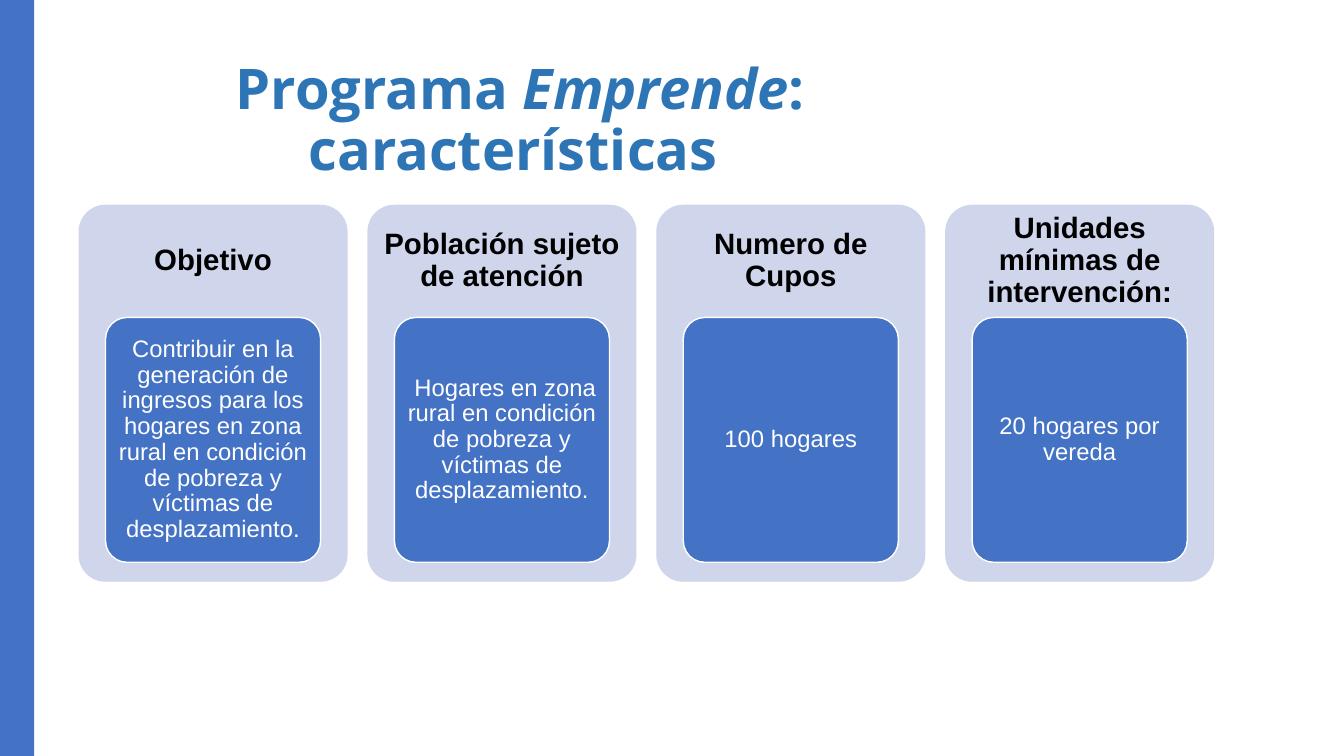
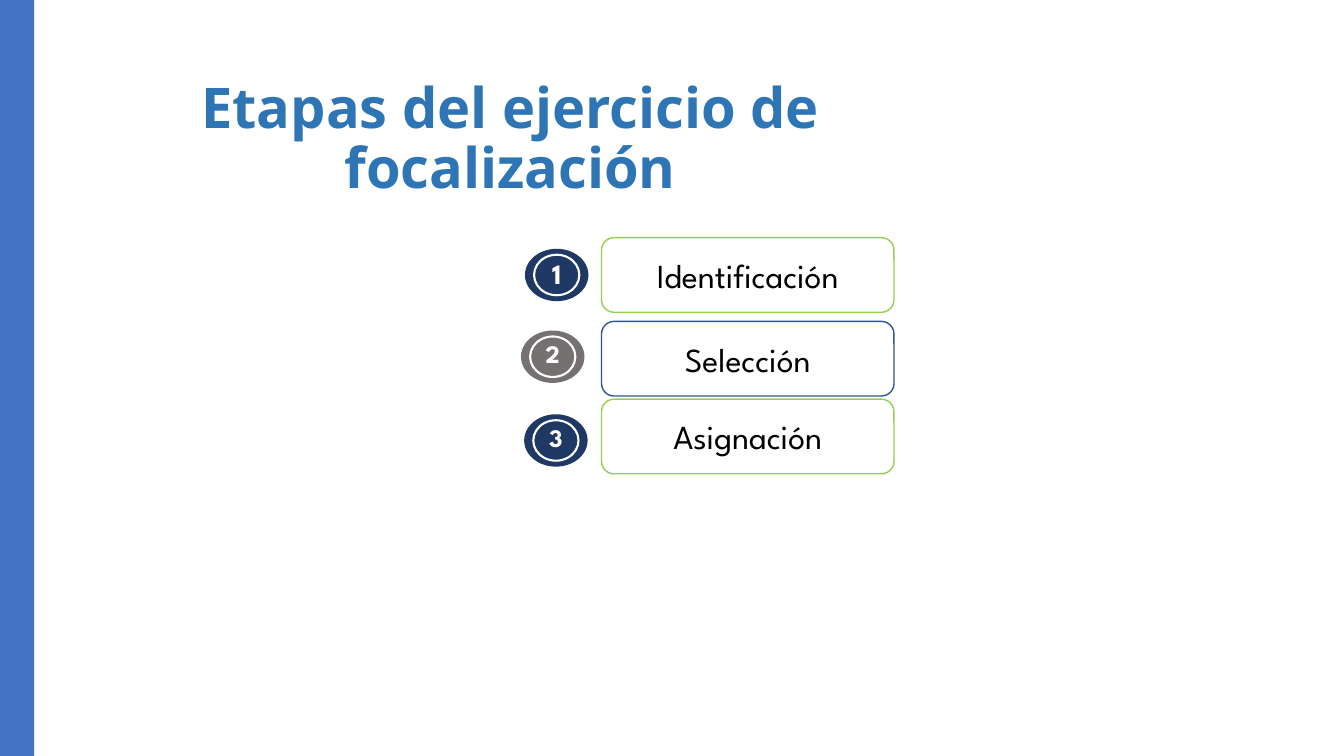
"""Build two slides on the Emprende programme: its features and its targeting stages."""
from pptx import Presentation
from pptx.dml.color import RGBColor
from pptx.enum.shapes import MSO_SHAPE
from pptx.enum.text import MSO_ANCHOR, MSO_AUTO_SIZE, PP_ALIGN
from pptx.util import Cm, Pt

RECTANGLE, ROUNDED, OVAL = MSO_SHAPE.RECTANGLE, MSO_SHAPE.ROUNDED_RECTANGLE, MSO_SHAPE.OVAL
TOP, MIDDLE = MSO_ANCHOR.TOP, MSO_ANCHOR.MIDDLE
CENTER, NO_AUTOFIT = PP_ALIGN.CENTER, MSO_AUTO_SIZE.NONE

COLORS = {
    "blue": "4472C4", "title": "2E75B6", "card": "CFD5EA", "navy": "203864",
    "gray": "767171", "green": "92D050", "outline": "2F5597",
    "white": "FFFFFF", "black": "000000",
}
TITLE_FONT, CARD_FONT, STAGE_FONT = "Open Sans", "Arial", "League Spartan"
SLIDE_WIDTH, SLIDE_HEIGHT, BAND_WIDTH = 33.87, 19.05, 0.86
TITLE_ONLY = 5

FEATURES_TITLE = [("Programa ", False), ("Emprende", True), (": características ", False)]
FEATURES = [
    ("Objetivo", "Contribuir en la generación de ingresos para los hogares en zona rural "
                 "en condición de pobreza y víctimas de desplazamiento."),
    ("Población sujeto de atención", " Hogares en zona rural en condición de pobreza "
                                     "y víctimas de desplazamiento."),
    ("Numero de Cupos", "100 hogares"),
    ("Unidades mínimas de intervención:", "20 hogares por vereda"),
]
CARD_LEFT, CARD_TOP, CARD_PITCH = 1.98, 5.16, 7.28
CARD_WIDTH, CARD_HEIGHT, HEADER_HEIGHT = 6.78, 9.5, 2.84
PANEL_WIDTH, PANEL_HEIGHT = 5.42, 6.17

STAGES_TITLE = [("Etapas del ejercicio de focalización", False)]
STAGES = [
    {"label": "Identificación", "top": 5.99, "line": "green",
     "badge": (13.23, 6.27), "fill": "navy", "size": 20},
    {"label": "Selección", "top": 8.1, "line": "outline",
     "badge": (13.13, 8.33), "fill": "gray", "size": 18},
    {"label": "Asignación", "top": 10.06, "line": "green",
     "badge": (13.21, 10.44), "fill": "navy", "size": 18},
]
STAGE_LEFT, STAGE_WIDTH, STAGE_HEIGHT = 15.16, 7.37, 1.88
BADGE_WIDTH, BADGE_HEIGHT, RING_WIDTH, RING_HEIGHT = 1.6, 1.32, 1.14, 1.02
NUMBER_WIDTH, NUMBER_HEIGHT = 1.85, 1.83


def color(name):
    return RGBColor.from_string(COLORS[name])


def add_box(shapes, kind, box, fill=None, line=None, line_width=1.0, corner=None):
    shape = shapes.add_shape(kind, *map(Cm, box))
    shape.shadow.inherit = False
    if fill:
        shape.fill.solid()
        shape.fill.fore_color.rgb = color(fill)
    else:
        shape.fill.background()
    if line:
        shape.line.color.rgb = color(line)
        shape.line.width = Pt(line_width)
    else:
        shape.line.fill.background()
    if corner is not None:
        shape.adjustments[0] = corner
    return shape


def write_text(shape, runs, font_name, size, text_color, bold=False,
               anchor=MIDDLE, spacing=1.0, margins=(0.25, 0.13)):
    frame = shape.text_frame
    frame.word_wrap = True
    frame.auto_size = NO_AUTOFIT
    frame.vertical_anchor = anchor
    frame.margin_left = frame.margin_right = Cm(margins[0])
    frame.margin_top = frame.margin_bottom = Cm(margins[1])
    paragraph = frame.paragraphs[0]
    paragraph.alignment = CENTER
    paragraph.line_spacing = spacing
    for text, italic in runs:
        run = paragraph.add_run()
        run.text = text
        font = run.font
        font.name, font.size = font_name, Pt(size)
        font.bold, font.italic = bold, italic
        font.color.rgb = color(text_color)


def add_titled_slide(presentation, runs, box):
    slide = presentation.slides.add_slide(presentation.slide_layouts[TITLE_ONLY])
    title = slide.shapes.title
    title.left, title.top, title.width, title.height = map(Cm, box)
    write_text(title, runs, TITLE_FONT, 40, "title", bold=True, anchor=TOP, spacing=0.9)
    return slide


def move_band_to_layout(slide):
    band = add_box(slide.shapes, RECTANGLE, (0, 0, BAND_WIDTH, SLIDE_HEIGHT), "blue")
    slide.slide_layout.shapes.element.insert(2, band.element)


def add_feature(shapes, index, header, body):
    left = CARD_LEFT + index * CARD_PITCH
    add_box(shapes, ROUNDED, (left, CARD_TOP, CARD_WIDTH, CARD_HEIGHT), "card", corner=0.1)
    heading = shapes.add_textbox(*map(Cm, (left, CARD_TOP, CARD_WIDTH, HEADER_HEIGHT)))
    write_text(heading, [(header, False)], CARD_FONT, 21, "black", bold=True,
               spacing=0.9, margins=(0.23, 0.23))
    panel_left = left + (CARD_WIDTH - PANEL_WIDTH) / 2
    panel = add_box(shapes, ROUNDED,
                    (panel_left, CARD_TOP + HEADER_HEIGHT, PANEL_WIDTH, PANEL_HEIGHT),
                    "blue", "white", corner=0.1)
    write_text(panel, [(body, False)], CARD_FONT, 17, "white", spacing=0.9,
               margins=(0.13, 0.1))


def add_stage(shapes, number, stage):
    left, top = stage["badge"]
    badge = shapes.add_group_shape().shapes
    add_box(badge, OVAL, (left, top, BADGE_WIDTH, BADGE_HEIGHT), stage["fill"])
    ring_left = left + (BADGE_WIDTH - RING_WIDTH) / 2
    ring_top = top + (BADGE_HEIGHT - RING_HEIGHT) / 2
    add_box(badge, OVAL, (ring_left, ring_top, RING_WIDTH, RING_HEIGHT),
            line="white", line_width=1.5)
    number_left = left + (BADGE_WIDTH - NUMBER_WIDTH) / 2
    digit = badge.add_textbox(
        *map(Cm, (number_left, top + 0.06, NUMBER_WIDTH, NUMBER_HEIGHT)))
    write_text(digit, [(str(number), False)], STAGE_FONT, stage["size"], "white",
               bold=True, anchor=TOP)
    box = add_box(shapes, ROUNDED, (STAGE_LEFT, stage["top"], STAGE_WIDTH, STAGE_HEIGHT),
                  "white", stage["line"])
    write_text(box, [(stage["label"], False)], STAGE_FONT, 24, "black")


def main():
    presentation = Presentation()
    presentation.slide_width, presentation.slide_height = Cm(SLIDE_WIDTH), Cm(SLIDE_HEIGHT)

    slide = add_titled_slide(presentation, FEATURES_TITLE, (1.17, 1.42, 23.88, 1.68))
    move_band_to_layout(slide)
    for index, (header, body) in enumerate(FEATURES):
        add_feature(slide.shapes, index, header, body)

    slide = add_titled_slide(presentation, STAGES_TITLE, (1.12, 1.88, 23.47, 1.12))
    for number, stage in enumerate(STAGES, start=1):
        add_stage(slide.shapes, number, stage)

    presentation.save("out.pptx")


if __name__ == "__main__":
    main()
